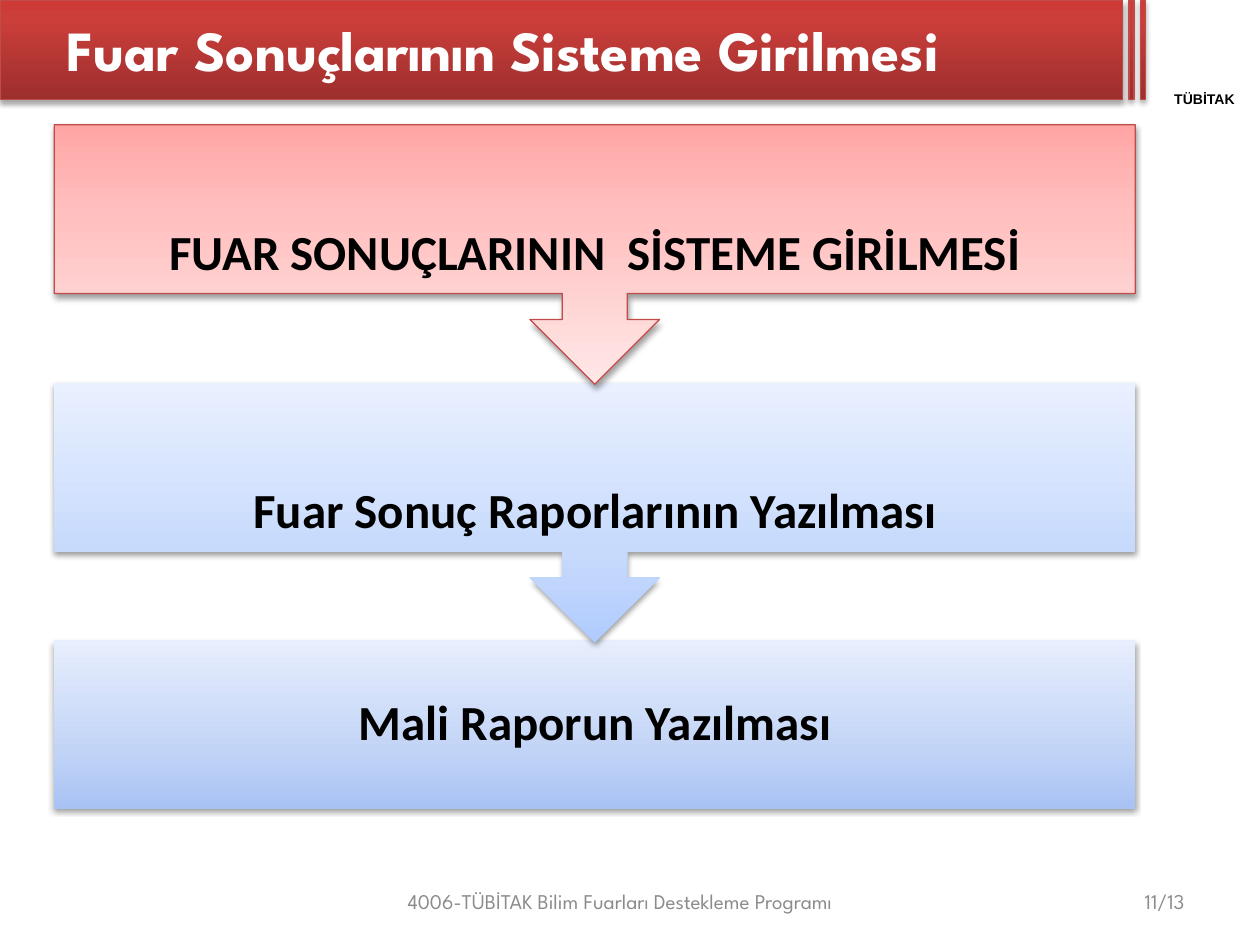
from dataclasses import dataclass

import pptx
import pptx.dml.color
import pptx.enum.shapes
import pptx.enum.text
import pptx.oxml
import pptx.oxml.ns
import pptx.util
from pptx.util import Inches, Pt

SHAPE = pptx.enum.shapes.MSO_SHAPE
ALIGN = pptx.enum.text.PP_ALIGN
MIDDLE = pptx.enum.text.MSO_ANCHOR.MIDDLE
Stops = tuple[tuple[int, str], ...]


@dataclass(frozen=True)
class Theme:
    heading: str = "League Spartan"
    body: str = "Calibri"
    label: str = "Arial"
    white: str = "FFFFFF"
    black: str = "000000"
    grey: str = "8C8C8C"
    outline: str = "BF4C48"
    header: Stops = ((0, "9C2F2D"), (80, "CB3E3A"), (100, "CE3B37"))
    red: Stops = ((0, "FFA6A5"), (35, "FFC0BF"), (100, "FFE7E7"))
    blue: Stops = ((0, "B0CBFD"), (35, "C7DAFC"), (100, "E9F0FF"))
    deep_blue: Stops = ((0, "A8C2F4"), (35, "C2D4F6"), (100, "E7EEFD"))
    title_size: float = 32.4
    step_size: float = 28
    footer_size: float = 12
    label_size: float = 8


@dataclass(frozen=True)
class Box:
    left: float
    top: float
    width: float
    height: float

    def emu(self) -> tuple[int, ...]:
        return tuple(Inches(v) for v in (self.left, self.top, self.width, self.height))


@dataclass(frozen=True)
class Step:
    text: str
    box: Box
    stops: Stops
    shape: int = SHAPE.UP_ARROW_CALLOUT
    rotation: int = 180
    angle: int = 270
    outline: str | None = None


T = Theme()
STEP_LEFT, STEP_WIDTH, CALLOUT_HEIGHT = 0.43, 8.58, 2.06
STEPS = (
    Step("Mali Raporun Yazılması", Box(STEP_LEFT, 5.08, STEP_WIDTH, 1.34),
         T.deep_blue, SHAPE.RECTANGLE, rotation=0),
    Step("Fuar Sonuç Raporlarının Yazılması",
         Box(STEP_LEFT, 3.04, STEP_WIDTH, CALLOUT_HEIGHT), T.blue, angle=90),
    Step("FUAR SONUÇLARININ  SİSTEME GİRİLMESİ",
         Box(STEP_LEFT, 0.99, STEP_WIDTH, CALLOUT_HEIGHT), T.red, outline=T.outline),
)
HEADER_BARS = tuple(Box(x, 0, w, 0.79) for x, w in ((0, 8.91), (8.96, 0.04), (9.05, 0.04)))


def rgb(color: str) -> pptx.dml.color.RGBColor:
    return pptx.dml.color.RGBColor.from_string(color)


def set_gradient(sp, stops: Stops, angle: int) -> None:
    """Fill with any number of stops; the angle runs clockwise in degrees."""
    sp.fill.solid()
    solid = sp.fill._xPr.find(pptx.oxml.ns.qn("a:solidFill"))
    marks = "".join(f'<a:gs pos="{pos * 1000}"><a:srgbClr val="{color}"/></a:gs>'
                    for pos, color in stops)
    grad = pptx.oxml.parse_xml(
        f'<a:gradFill {pptx.oxml.ns.nsdecls("a")} rotWithShape="1"><a:gsLst>{marks}</a:gsLst>'
        f'<a:lin ang="{angle * 60000}" scaled="0"/></a:gradFill>')
    solid.getparent().replace(solid, grad)


def set_shadow(sp, alpha: int, distance: float) -> None:
    sp.shadow.inherit = False
    effects = sp._element.spPr.find(pptx.oxml.ns.qn("a:effectLst"))
    effects.append(pptx.oxml.parse_xml(
        f'<a:outerShdw {pptx.oxml.ns.nsdecls("a")} blurRad="{Pt(3.1)}" dist="{Pt(distance)}" '
        f'dir="5400000" rotWithShape="0"><a:srgbClr val="{T.black}">'
        f'<a:alpha val="{alpha * 1000}"/></a:srgbClr></a:outerShdw>'))


def add_panel(slide, kind: int, box: Box, stops: Stops, angle: int = 270,
              outline: str | None = None, alpha: int = 38, distance: float = 1.6):
    sp = slide.shapes.add_shape(kind, *box.emu())
    set_gradient(sp, stops, angle)
    if outline:
        sp.line.color.rgb = rgb(outline)
        sp.line.width = Pt(0.75)
    else:
        sp.line.fill.background()
    set_shadow(sp, alpha, distance)
    return sp


def format_text(sp, text: str, font: str, size: float, color: str, align: int,
                bold: bool = False):
    tf = sp.text_frame
    tf.word_wrap = True
    tf.vertical_anchor = MIDDLE
    p = tf.paragraphs[0]
    p.text = text
    p.alignment = align
    p.font.name, p.font.size, p.font.bold = font, Pt(size), bold
    p.font.color.rgb = rgb(color)
    return p


def add_text(slide, box: Box, text: str, font: str, size: float, color: str,
             align: int = ALIGN.CENTER, bold: bool = False, inset: float | None = None):
    sp = slide.shapes.add_textbox(*box.emu())
    if inset is not None:
        tf = sp.text_frame
        tf.margin_left = tf.margin_right = tf.margin_top = tf.margin_bottom = Inches(inset)
    return format_text(sp, text, font, size, color, align, bold)


def add_step(slide, step: Step) -> None:
    sp = add_panel(slide, step.shape, step.box, step.stops, step.angle, step.outline)
    sp.rotation = step.rotation
    p = add_text(slide, step.box, step.text, T.body, T.step_size, T.black,
                 bold=True, inset=0.22)
    p.line_spacing = 0.9


def add_title(slide, box: Box, text: str) -> None:
    sp = slide.shapes.title
    sp.left, sp.top, sp.width, sp.height = box.emu()
    format_text(sp, text, T.heading, T.title_size, T.white, ALIGN.LEFT, bold=True)
    # The placeholder comes first in the tree; bring it in front of the header bars.
    slide.shapes._spTree.append(sp._element)


def main() -> None:
    prs = pptx.Presentation()
    prs.slide_width, prs.slide_height = Inches(10), Inches(7.5)
    slide = prs.slides.add_slide(prs.slide_layouts[5])

    for bar in HEADER_BARS:
        add_panel(slide, SHAPE.RECTANGLE, bar, T.header, outline=T.outline,
                  alpha=35, distance=1.8)
    add_text(slide, Box(9.05, 0.72, 1.02, 0.13), "TÜBİTAK", T.label, T.label_size,
             T.black, bold=True, inset=0)
    add_title(slide, Box(0.43, 0, 8.5, 0.77), "Fuar Sonuçlarının Sisteme Girilmesi")

    add_text(slide, Box(1.06, 6.95, 7.72, 0.4),
             "4006-TÜBİTAK Bilim Fuarları Destekleme Programı",
             T.heading, T.footer_size, T.grey)
    add_text(slide, Box(7.17, 6.95, 2.33, 0.4), "11/13",
             T.heading, T.footer_size, T.grey, ALIGN.RIGHT)

    for step in STEPS:
        add_step(slide, step)
    prs.save("out.pptx")


if __name__ == "__main__":
    main()
